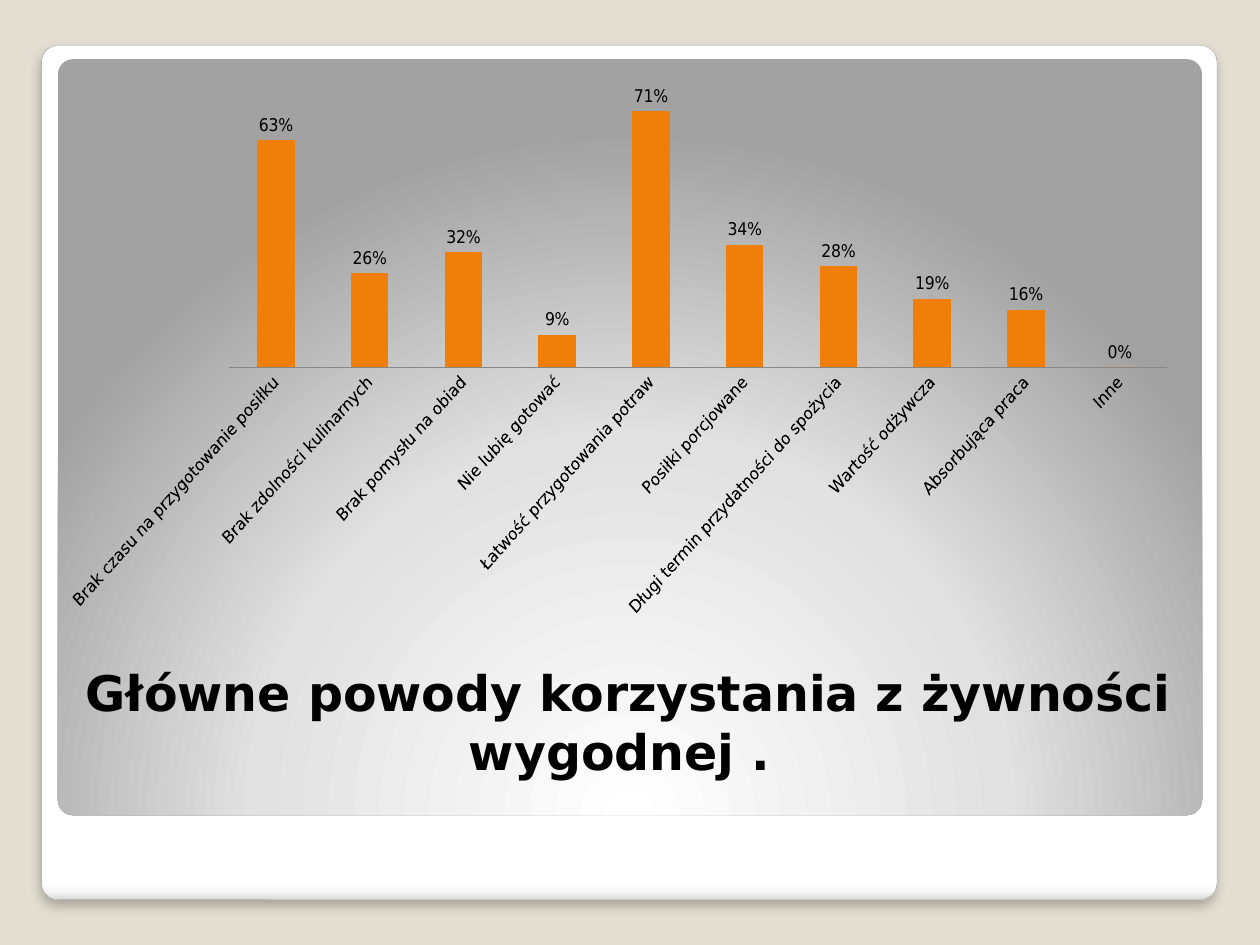
import pptx
import pptx.chart.data
import pptx.dml.color
import pptx.enum.chart
import pptx.enum.shapes
import pptx.enum.text
import pptx.oxml
import pptx.oxml.ns
import pptx.util

Inches, Pt = pptx.util.Inches, pptx.util.Pt
qn = pptx.oxml.ns.qn
FONT = "DejaVu Sans"
COLORS = {"back": "E3DED1", "bar": "F07F09", "text": "000000",
          "edge": "A4A4A4", "axis": "878787"}
REASONS = {
    "Brak czasu na przygotowanie posiłku": 63,
    "Brak zdolności kulinarnych": 26,
    "Brak pomysłu na obiad": 32,
    "Nie lubię gotować": 9,
    "Łatwość przygotowania potraw": 71,
    "Posiłki porcjowane": 34,
    "Długi termin przydatności do spożycia": 28,
    "Wartość odżywcza": 19,
    "Absorbująca praca": 16,
    "Inne": 0,
}
FRAME = [(0, "FFFFFF"), (98, "FFFFFF"), (99, "F7F7F7"), (100, "DADADA")]
PANEL = [(0, "FFFFFF"), (55, "E1E1E1"), (100, "A2A2A2")]
DOWN = '<a:lin ang="5400000" scaled="0"/>'
ROUND = ('<a:path path="circle"><a:fillToRect l="50000" t="175000" '
         'r="50000" b="-75000"/></a:path>')
SHADOW = ('<a:outerShdw blurRad="76200" dist="50800" dir="5400000" algn="tl" '
          'rotWithShape="0"><a:srgbClr val="000000"><a:alpha val="25000"/>'
          '</a:srgbClr></a:outerShdw>')


def color(name):
    return pptx.dml.color.RGBColor.from_string(COLORS[name])


def node(tag, body):
    """Make an XML element in the a: or c: namespace."""
    space = pptx.oxml.ns.nsdecls(tag.split(":")[0])
    return pptx.oxml.parse_xml(f"<{tag} {space}>{body}</{tag}>")


class Deck:
    def __init__(self):
        self.show = pptx.Presentation()
        self.show.slide_width, self.show.slide_height = Inches(10), Inches(7.5)
        self.slide = self.show.slides.add_slide(self.show.slide_layouts[5])
        fill = self.slide.background.fill
        fill.solid()
        fill.fore_color.rgb = color("back")

    def style(self, font, size, bold=False):
        font.name, font.size, font.bold = FONT, Pt(size), bold
        font.color.rgb = color("text")

    def panel(self, box, stops, shade, edge=None, shadow=""):
        kind = pptx.enum.shapes.MSO_SHAPE.ROUNDED_RECTANGLE
        shape = self.slide.shapes.add_shape(kind, *map(Inches, box))
        shape.adjustments[0] = 0.02
        shape.shadow.inherit = False
        shape.fill.solid()
        marks = "".join(f'<a:gs pos="{pos * 1000}"><a:srgbClr val="{tone}"/></a:gs>'
                        for pos, tone in stops)
        props = shape._element.spPr
        props.replace(props.find(qn("a:solidFill")),
                      node("a:gradFill", f"<a:gsLst>{marks}</a:gsLst>{shade}"))
        if edge:
            shape.line.color.rgb = color(edge)
            shape.line.width = Pt(0.16)
        else:
            shape.line.fill.background()
        if shadow:
            props.replace(props.find(qn("a:effectLst")), node("a:effectLst", shadow))

    def title(self, box, text):
        title = self.slide.shapes.title
        title.left, title.top, title.width, title.height = map(Inches, box)
        # Bring the title in front of the panels
        self.slide.shapes._spTree.append(title._element)
        frame = title.text_frame
        frame.text = text
        frame.word_wrap = True
        frame.auto_size = pptx.enum.text.MSO_AUTO_SIZE.NONE
        frame.vertical_anchor = pptx.enum.text.MSO_ANCHOR.BOTTOM
        line = frame.paragraphs[0]
        line.alignment = pptx.enum.text.PP_ALIGN.CENTER
        self.style(line.font, 28, True)

    def chart(self, box, values, area):
        data = pptx.chart.data.CategoryChartData(number_format='0"%"')
        data.categories = list(values)
        data.add_series("  ", list(values.values()))
        enum = pptx.enum.chart
        chart = self.slide.shapes.add_chart(
            enum.XL_CHART_TYPE.COLUMN_CLUSTERED, *map(Inches, box), data).chart
        chart.has_title = chart.has_legend = False
        self.style(chart.font, 10)

        # Bars and labels
        plot = chart.plots[0]
        plot.vary_by_categories = False
        plot.gap_width, plot.overlap = 150, -25
        fill = plot.series[0].format.fill
        fill.solid()
        fill.fore_color.rgb = color("bar")
        plot.has_data_labels = True
        labels = plot.data_labels
        labels.show_value = True
        labels.number_format, labels.number_format_is_linked = '0"%"', False
        labels.position = enum.XL_LABEL_POSITION.OUTSIDE_END
        self.style(labels.font, 10)

        # Axes
        scale = chart.value_axis
        scale.minimum_scale, scale.maximum_scale = 0, 80
        scale.has_major_gridlines = False
        scale.visible = False
        axis = chart.category_axis
        axis.major_tick_mark = enum.XL_TICK_MARK.NONE
        axis.format.line.color.rgb = color("axis")
        self.style(axis.tick_labels.font, 10)
        axis._element.txPr.find(qn("a:bodyPr")).set("rot", "-2700000")

        # Inner plot area, as shares of the chart
        body = '<c:layoutTarget val="inner"/>'
        body += "".join(f'<c:{key}Mode val="edge"/>' for key in "xy")
        body += "".join(f'<c:{key} val="{val}"/>' for key, val in zip("xywh", area))
        root = chart._chartSpace.chart.plotArea
        old = root.find(qn("c:layout"))
        if old is not None:
            root.remove(old)
        root.insert(0, node("c:layout", f"<c:manualLayout>{body}</c:manualLayout>"))


def main():
    deck = Deck()
    # Framed backdrop
    deck.panel((0.33, 0.36, 9.33, 6.78), FRAME, DOWN, "edge", SHADOW)
    deck.panel((0.46, 0.47, 9.08, 6), PANEL, ROUND)
    # Content
    deck.title((0.51, 5.48, 8.95, 0.76),
               "Główne powody korzystania z żywności wygodnej . ")
    deck.chart((0.55, 0.58, 8.95, 4.58), REASONS, (0.04, 0.01, 0.93, 0.5))
    deck.show.save("out.pptx")


if __name__ == "__main__":
    main()
